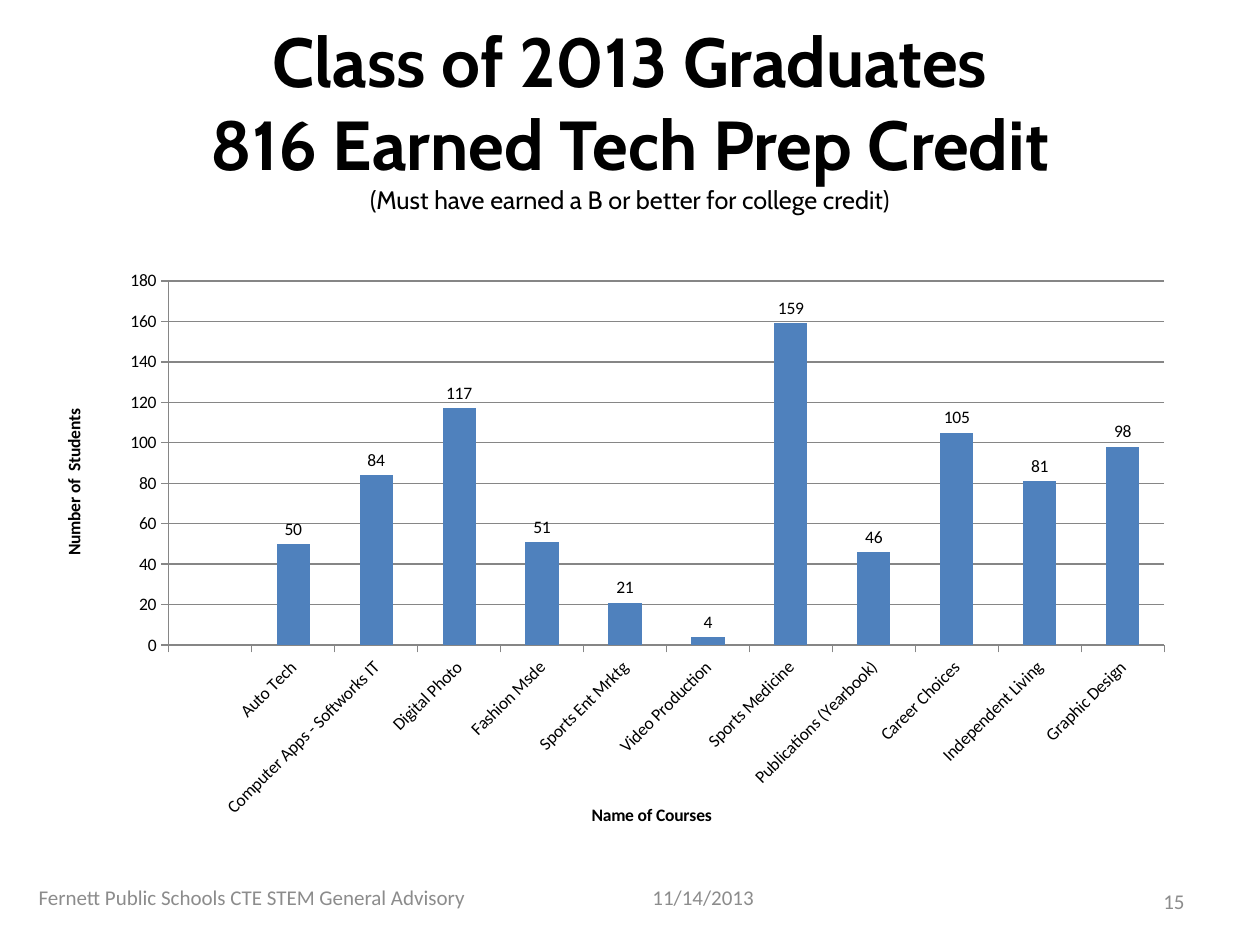
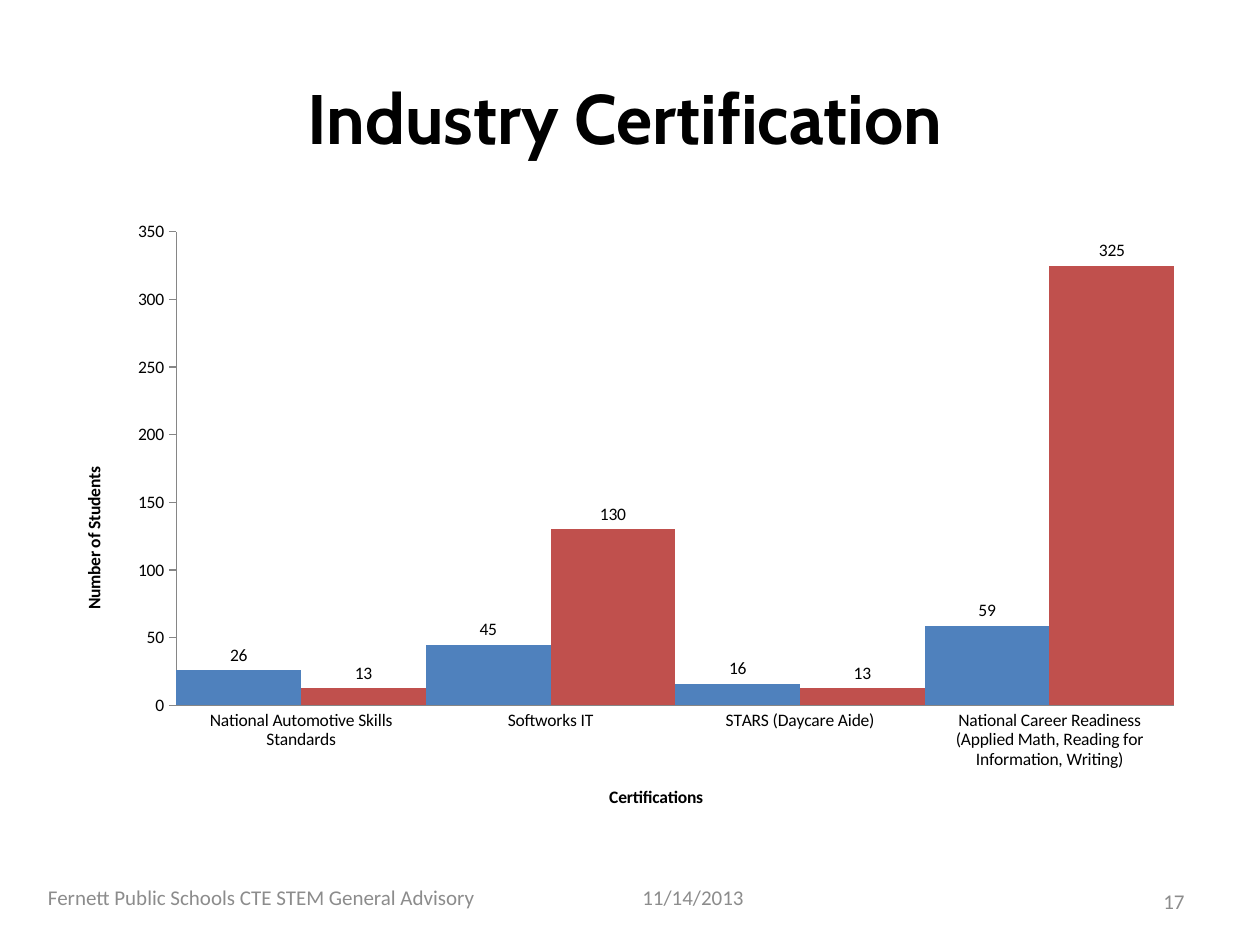
from pptx import Presentation, util as u
from pptx.chart.data import CategoryChartData
from pptx.dml.color import RGBColor
from pptx.enum import chart as ch, text
from pptx.oxml import parse_xml
from pptx.oxml.ns import nsdecls, qn

BLACK = RGBColor(0x00, 0x00, 0x00)
FOOTER_GREY = RGBColor(0x8C, 0x8C, 0x8C)
AXIS_GREY = RGBColor(0x86, 0x86, 0x86)
BLUE = RGBColor(0x4F, 0x81, 0xBD)
RED = RGBColor(0xC0, 0x50, 0x4D)

# Styles shared by both slides
HEADING = {"name": "Cabin", "bold": True}
FOOTER = {"name": "Calibri", "size": u.Pt(12)}
CHART_TEXT = {"name": "Calibri", "size": u.Pt(10), "bold": False}
AXIS_TITLE = {"name": "Calibri", "size": u.Pt(10), "bold": True}
CHART_WIDTH, CHART_HEIGHT = 9, 4.95
FOOTER_HEIGHT = 0.4
ORGANISATION = "Fernett Public Schools CTE STEM General Advisory"
LEFT, CENTER, RIGHT = text.PP_ALIGN.LEFT, text.PP_ALIGN.CENTER, text.PP_ALIGN.RIGHT

# Plot and axis title places are inches from the chart's corner
SLIDES = [
    {
        "heading": [("Class of 2013 Graduates\v816 Earned Tech Prep Credit\v", 39.6, True),
                    ("(Must have earned a B or better for college credit)", 14.4, False)],
        "heading_left": 0.5,
        "footers": [("11/14/2013", 5.08, 6.92, 1.25, LEFT),
                    (ORGANISATION, 0, 6.92, 4, CENTER),
                    ("15", 7.17, 6.95, 2.33, RIGHT)],
        "chart_at": (0.42, 2.05),
        "courses": ["", "Auto Tech", "Computer Apps - Softworks IT", "Digital Photo",
                    "Fashion Msde", "Sports Ent Mrktg", "Video Production",
                    "Sports Medicine", "Publications (Yearbook)", "Career Choices",
                    "Independent Living", "Graphic Design"],
        "students": [(BLUE, [None, 50, 84, 117, 51, 21, 4, 159, 46, 105, 81, 98])],
        "gap": 150, "grid": True, "label_turn": -45, "top": 180, "step": 20,
        "course_tick": ch.XL_TICK_MARK.OUTSIDE,
        "plot": (0.92, 0.18, 7.9, 2.89),
        "axis_titles": [("Name of Courses", 4.25, 4.3),
                        ("Number of  Students", 0.05, 1.17)],
    },
    {
        "heading": [("Industry Certification", 40, True)],
        "heading_left": 0.42,
        "footers": [("17", 8.92, 6.95, 0.58, RIGHT),
                    (ORGANISATION, 0.01, 6.92, 4.13, CENTER),
                    ("11/14/2013", 5, 6.92, 2.33, LEFT)],
        "chart_at": (0.5, 1.67),
        "courses": ["National Automotive Skills Standards", "Softworks IT",
                    "STARS (Daycare Aide)",
                    "National Career Readiness (Applied Math, Reading for Information, Writing)"],
        "students": [(BLUE, [26, 45, 16, 59]), (RED, [13, 130, 13, 325])],
        "gap": 0, "grid": False, "label_turn": 0, "top": 350, "step": 50,
        "course_tick": ch.XL_TICK_MARK.NONE,
        "plot": (0.9, 0.17, 7.92, 3.76),
        "axis_titles": [("Certifications", 4.31, 4.54),
                        ("Number of Students", 0.13, 2.01)],
    },
]


def style(font, look, color=BLACK):
    for key, value in look.items():
        setattr(font, key, value)
    font.color.rgb = color


def place(element, index, inches, target=""):
    """Fix a chart part at a place, and size, inside the chart."""
    old = element.find(qn("c:layout"))
    if old is not None:
        element.remove(old)
    modes = '<c:xMode val="edge"/><c:yMode val="edge"/>'
    sides = (CHART_WIDTH, CHART_HEIGHT) * 2
    sizes = "".join(f'<c:{key} val="{length / side:.4f}"/>'
                    for key, length, side in zip("xywh", inches, sides))
    element.insert(index, parse_xml(
        f'<c:layout {nsdecls("c")}><c:manualLayout>{target}{modes}{sizes}'
        '</c:manualLayout></c:layout>'))


prs = Presentation()
prs.slide_width, prs.slide_height = u.Inches(10), u.Inches(7.5)

for page in SLIDES:
    slide = prs.slides.add_slide(prs.slide_layouts[5])

    # Heading
    heading = slide.shapes.title
    left = page["heading_left"]
    heading.left, heading.top = u.Inches(left), u.Inches(0.3)
    heading.width, heading.height = u.Inches(9.5 - left), u.Inches(1.25)
    heading.text_frame.auto_size = text.MSO_AUTO_SIZE.NONE
    heading.text_frame.vertical_anchor = text.MSO_ANCHOR.MIDDLE
    line = heading.text_frame.paragraphs[0]
    line.alignment = CENTER
    for words, size, bold in page["heading"]:
        for i, part in enumerate(words.split("\v")):
            if i:
                line.add_line_break()
            if part:
                run = line.add_run()
                run.text = part
                style(run.font, {**HEADING, "size": u.Pt(size), "bold": bold})

    # Date, organisation and page number
    for words, x, y, width, align in page["footers"]:
        footer = slide.shapes.add_textbox(*map(u.Inches, (x, y, width, FOOTER_HEIGHT)))
        footer.text_frame.word_wrap = True
        footer.text_frame.vertical_anchor = text.MSO_ANCHOR.MIDDLE
        line = footer.text_frame.paragraphs[0]
        line.alignment = align
        run = line.add_run()
        run.text = words
        style(run.font, FOOTER, FOOTER_GREY)

    # Column chart
    data = CategoryChartData()
    data.categories = page["courses"]
    for number, (_, counts) in enumerate(page["students"], 1):
        data.add_series(f"Series {number}", counts)
    chart = slide.shapes.add_chart(
        ch.XL_CHART_TYPE.COLUMN_CLUSTERED,
        *map(u.Inches, (*page["chart_at"], CHART_WIDTH, CHART_HEIGHT)), data).chart
    chart.has_legend = chart.has_title = False
    style(chart.font, CHART_TEXT)
    columns = chart.plots[0]
    columns.gap_width, columns.overlap = page["gap"], 0
    columns.vary_by_categories = False
    for series, (color, _) in zip(columns.series, page["students"]):
        series.format.fill.solid()
        series.format.fill.fore_color.rgb = color
        labels = series.data_labels
        labels.show_value = True
        labels.position = ch.XL_LABEL_POSITION.OUTSIDE_END
        style(labels.font, CHART_TEXT)
    place(chart._chartSpace.chart.plotArea, 0, page["plot"],
          '<c:layoutTarget val="inner"/>')

    # Axes
    courses, students = chart.category_axis, chart.value_axis
    students.minimum_scale, students.maximum_scale = 0, page["top"]
    students.major_unit = page["step"]
    students.has_major_gridlines = page["grid"]
    if page["grid"]:
        students.major_gridlines.format.line.color.rgb = AXIS_GREY
    courses.major_tick_mark = page["course_tick"]
    students.major_tick_mark = ch.XL_TICK_MARK.OUTSIDE
    for axis, (words, x, y) in zip((courses, students), page["axis_titles"]):
        axis.minor_tick_mark = ch.XL_TICK_MARK.NONE
        axis.format.line.color.rgb = AXIS_GREY
        style(axis.tick_labels.font, CHART_TEXT)
        frame = axis.axis_title.text_frame
        frame.text = words
        style(frame.paragraphs[0].runs[0].font, AXIS_TITLE)
        place(axis.axis_title._element, 1, (x, y))
        if axis is students:
            frame._txBody.bodyPr.set("rot", "-5400000")
            frame._txBody.bodyPr.set("vert", "horz")
    turn = courses._element.find(qn("c:txPr")).find(qn("a:bodyPr"))
    turn.set("rot", str(page["label_turn"] * 60000))

prs.save("out.pptx")
